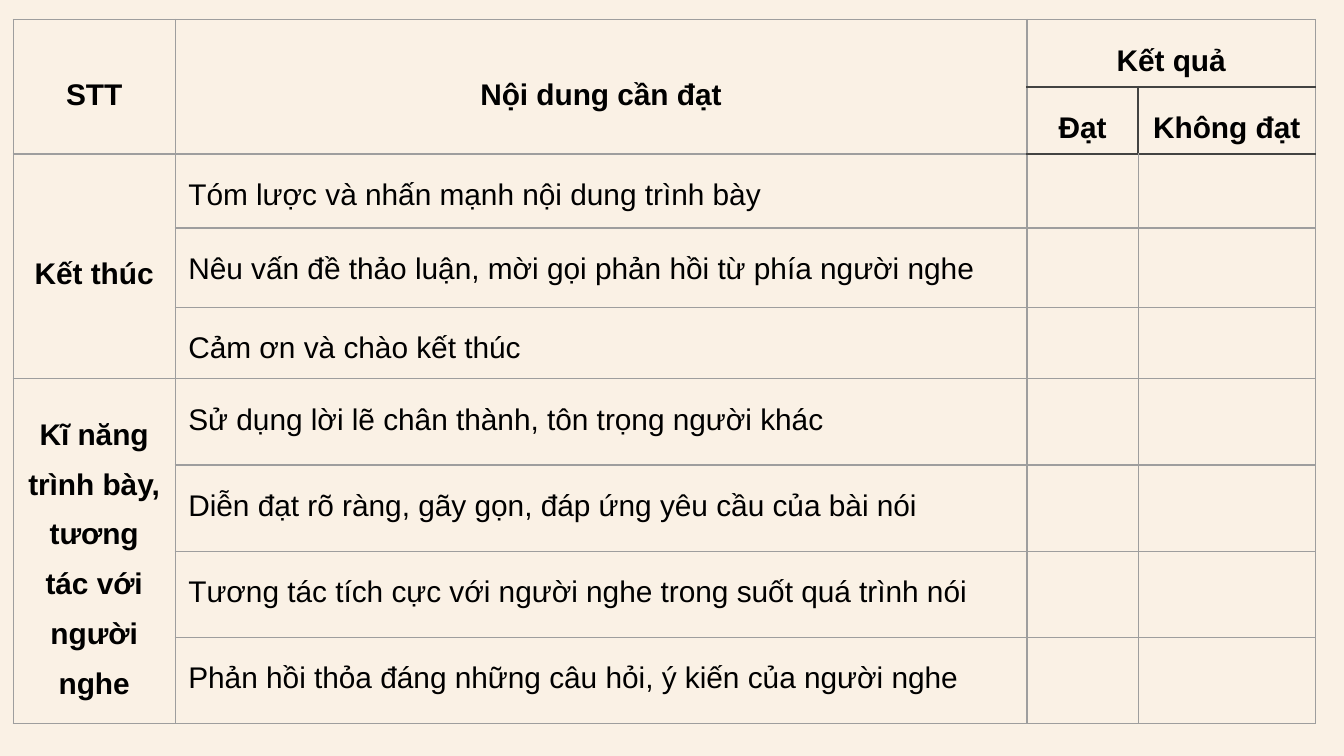
import pptx
import pptx.dml.color
import pptx.enum.text
import pptx.oxml.ns
import pptx.util
import lxml.etree

Cm = pptx.util.Cm
RGBColor = pptx.dml.color.RGBColor
ALIGN = pptx.enum.text.PP_ALIGN
ANCHOR = pptx.enum.text.MSO_ANCHOR

CREAM = RGBColor(0xFA, 0xF1, 0xE5)
BLACK = RGBColor(0x00, 0x00, 0x00)
GREY = RGBColor(0x9E, 0x9E, 0x9E)
DARK = RGBColor(0x43, 0x43, 0x42)

COLS = [3.06, 16.1, 2.1, 3.35]
ROWS = [1.27, 1.27, 1.4, 1.5, 1.35] + [1.63] * 4
HEADS = [
    (0, 0, 2, 1, "STT"),
    (0, 1, 2, 1, "Nội dung cần đạt"),
    (0, 2, 1, 2, "Kết quả"),
    (1, 2, 1, 1, "Đạt"),
    (1, 3, 1, 1, "Không đạt"),
    (2, 0, 3, 1, "Kết thúc"),
    (5, 0, 4, 1, "Kĩ năng trình bày, tương tác với người nghe"),
]
GOALS = [
    "Tóm lược và nhấn mạnh nội dung trình bày",
    "Nêu vấn đề thảo luận, mời gọi phản hồi từ phía người nghe",
    "Cảm ơn và chào kết thúc",
    "Sử dụng lời lẽ chân thành, tôn trọng người khác",
    "Diễn đạt rõ ràng, gãy gọn, đáp ứng yêu cầu của bài nói",
    "Tương tác tích cực với người nghe trong suốt quá trình nói",
    "Phản hồi thỏa đáng những câu hỏi, ý kiến của người nghe",
]
DARK_SIDES = {(0, 2): "B", (0, 3): "B", (1, 2): "RTB", (1, 3): "LTB", (2, 2): "T", (2, 3): "T"}


def write(cell, text, bold=False, align=ALIGN.JUSTIFY, anchor=ANCHOR.TOP):
    """Put formatted text into a cell."""
    cell.vertical_anchor = anchor
    par = cell.text_frame.paragraphs[0]
    par.alignment = align
    par.line_spacing = 1.5
    run = par.add_run()
    run.text = text
    font = run.font
    font.name = "Arial"
    font.size = pptx.util.Pt(16)
    font.bold = bold
    font.color.rgb = BLACK


def edge(cell, side, color, width):
    """Append one border line to a cell."""
    qn = pptx.oxml.ns.qn
    props = cell._tc.get_or_add_tcPr()
    line = lxml.etree.SubElement(props, qn("a:ln" + side), w=str(pptx.util.Pt(width)))
    fill = lxml.etree.SubElement(line, qn("a:solidFill"))
    lxml.etree.SubElement(fill, qn("a:srgbClr"), val=str(color))


def style(cell, dark):
    """Set the borders, fill and margins of a cell."""
    for side in "LRTB":
        if side in dark:
            edge(cell, side, DARK, 1)
        else:
            edge(cell, side, GREY, 0.75)
    cell.fill.solid()
    cell.fill.fore_color.rgb = CREAM
    cell.margin_left = cell.margin_right = Cm(0.25)
    cell.margin_top = cell.margin_bottom = Cm(0.15)


def make_grid(slide):
    """Add the bare table with its sizes and borders."""
    frame = slide.shapes.add_table(
        len(ROWS), len(COLS), Cm(0.25), Cm(0.37), Cm(sum(COLS)), Cm(sum(ROWS)))
    table = frame.table
    table.first_row = table.horz_banding = False
    for col, width in zip(table.columns, COLS):
        col.width = Cm(width)
    for row, height in zip(table.rows, ROWS):
        row.height = Cm(height)
    for r in range(len(ROWS)):
        for c in range(len(COLS)):
            style(table.cell(r, c), DARK_SIDES.get((r, c), ""))
    return table


def main():
    """Build the slide and save it."""
    deck = pptx.Presentation()
    deck.slide_width, deck.slide_height = Cm(25.4), Cm(14.29)
    slide = deck.slides.add_slide(deck.slide_layouts[6])
    back = slide.background.fill
    back.solid()
    back.fore_color.rgb = CREAM
    table = make_grid(slide)
    for r, c, high, wide, text in HEADS:
        cell = table.cell(r, c)
        if high * wide > 1:
            cell.merge(table.cell(r + high - 1, c + wide - 1))
        write(cell, text, bold=True, align=ALIGN.CENTER, anchor=ANCHOR.MIDDLE)
    for r, text in enumerate(GOALS, 2):
        write(table.cell(r, 1), text)
    deck.save("out.pptx")


if __name__ == "__main__":
    main()
